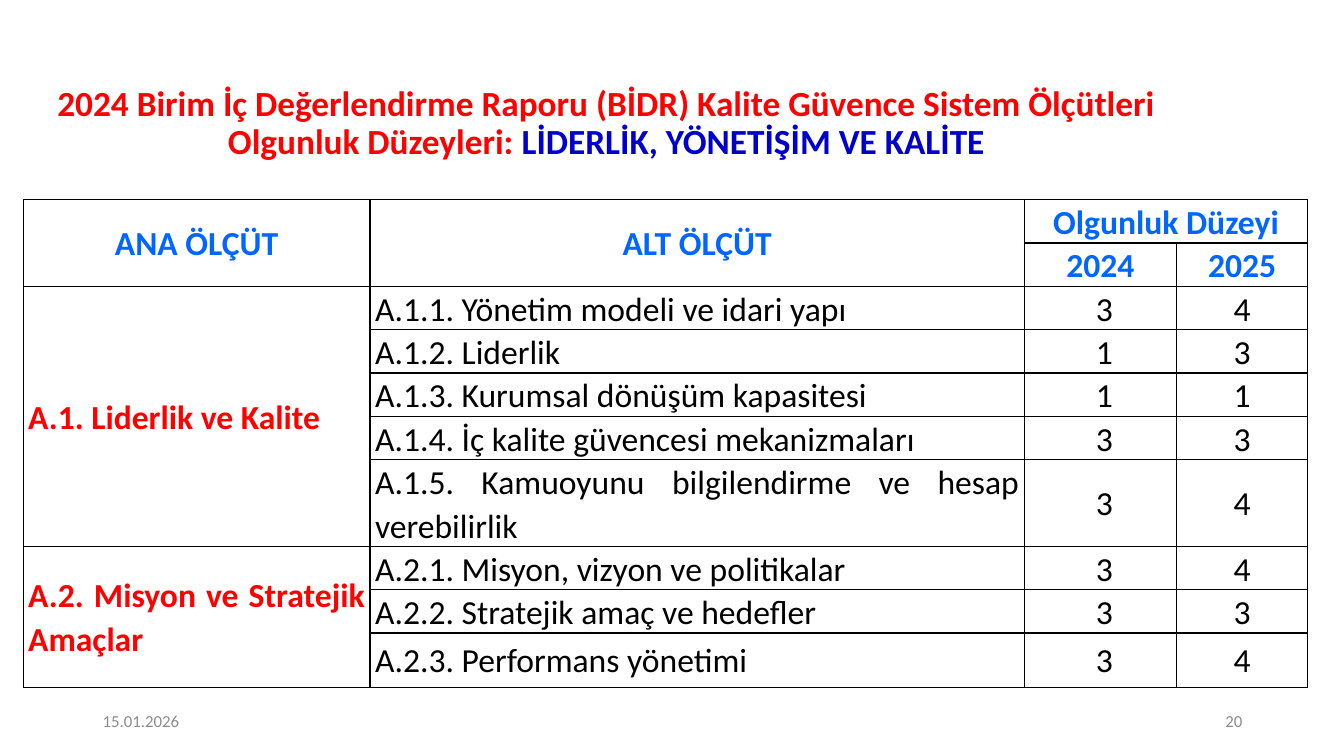
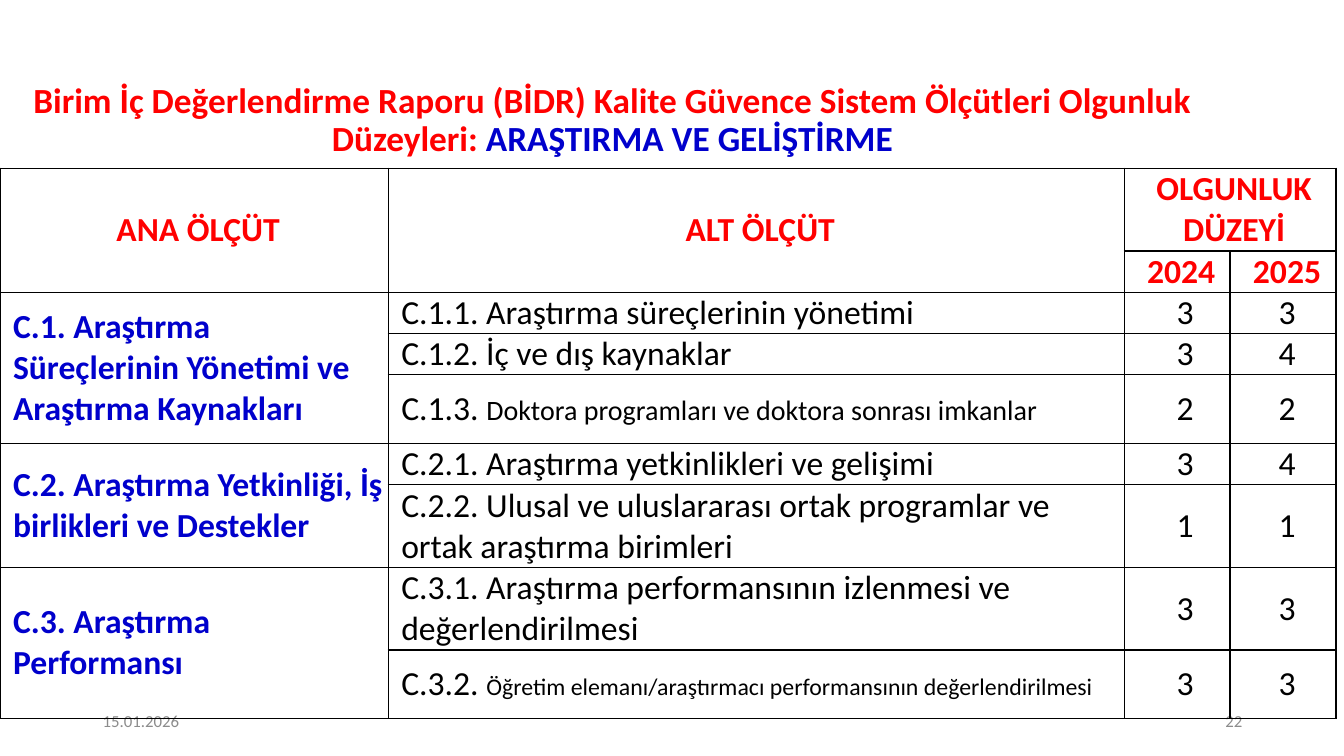
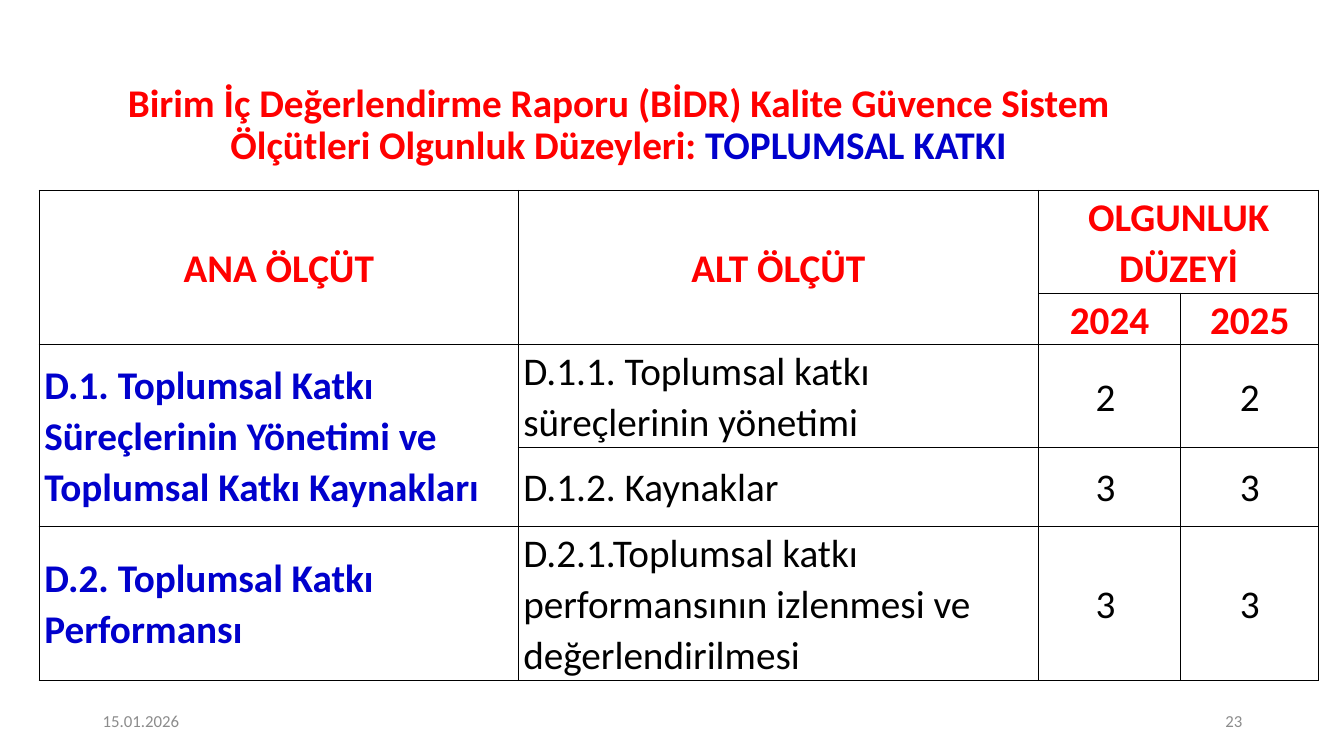
from lxml import etree
from pptx import Presentation
from pptx.dml.color import RGBColor
from pptx.enum.text import MSO_ANCHOR, MSO_AUTO_SIZE, PP_ALIGN
from pptx.oxml.ns import qn
from pptx.util import Inches, Pt

MID = MSO_ANCHOR.MIDDLE
LEFT, RIGHT = PP_ALIGN.LEFT, PP_ALIGN.RIGHT
CENTER, JUST = PP_ALIGN.CENTER, PP_ALIGN.JUSTIFY
RED = RGBColor(0xFF, 0x00, 0x00)
NAVY = RGBColor(0x00, 0x00, 0xCC)
BLUE = RGBColor(0x00, 0x66, 0xFF)
BLACK = RGBColor(0x00, 0x00, 0x00)
GREY = RGBColor(0x8C, 0x8C, 0x8C)
FONT = "Calibri"
DATE = "15.01.2026"
LEAD = ("Birim İç Değerlendirme Raporu (BİDR) Kalite Güvence Sistem "
        "Ölçütleri Olgunluk Düzeyleri: ")
INSET = 0.05

# Content: rows are (sub-criterion, 2024, 2025, height in text lines);
# a sub-criterion in two sizes is (code, rest, size of rest).
# "line" is the height of a text line, "nudge" shifts the 2024 scores.
SLIDES = [
    dict(
        page=20, lead="2024 " + LEAD, topic="LİDERLİK, YÖNETİŞİM VE KALİTE",
        title=(0.36, 0.85, 11.31, 0.77), big=25.2,
        at=(0.23, 1.98), cols=(3.44, 6.49, 1.51, 1.3), line=0.43, size=24,
        space=1.07, indent=0, nudge=0.08, align=JUST,
        head=("Olgunluk Düzeyi", 1), tint=BLUE, main=RED,
        groups=[
            ("A.1. Liderlik ve Kalite", [
                ("A.1.1. Yönetim modeli ve idari yapı", 3, 4, 1),
                ("A.1.2. Liderlik", 1, 3, 1),
                ("A.1.3. Kurumsal dönüşüm kapasitesi", 1, 1, 1),
                ("A.1.4. İç kalite güvencesi mekanizmaları", 3, 3, 1),
                ("A.1.5. Kamuoyunu bilgilendirme ve hesap verebilirlik",
                 3, 4, 2)]),
            ("A.2. Misyon ve Stratejik Amaçlar", [
                ("A.2.1. Misyon, vizyon ve politikalar", 3, 4, 1),
                ("A.2.2. Stratejik amaç ve hedefler", 3, 3, 1),
                ("A.2.3. Performans yönetimi", 3, 4, 1.25)]),
        ]),
    dict(
        page=22, lead=LEAD, topic="ARAŞTIRMA VE GELİŞTİRME",
        title=(0.23, 0.8, 11.69, 0.8), big=25.2,
        at=(0, 1.67), cols=(3.85, 7.3, 1.05, 1.05), line=0.41, size=24,
        space=1.0, indent=0.08, nudge=0.08, align=LEFT,
        head=("OLGUNLUK DÜZEYİ", 2), tint=RED, main=NAVY,
        groups=[
            ("C.1. Araştırma Süreçlerinin Yönetimi ve Araştırma Kaynakları", [
                ("C.1.1. Araştırma süreçlerinin yönetimi", 3, 3, 1),
                ("C.1.2. İç ve dış kaynaklar", 3, 4, 1),
                (("C.1.3. ", "Doktora programları ve doktora sonrası imkanlar",
                  20), 2, 2, 1.66)]),
            ("C.2. Araştırma Yetkinliği, İş birlikleri ve Destekler", [
                ("C.2.1. Araştırma yetkinlikleri ve gelişimi", 3, 4, 1),
                ("C.2.2. Ulusal ve uluslararası ortak programlar ve ortak "
                 "araştırma birimleri", 1, 1, 2)]),
            ("C.3. Araştırma Performansı", [
                ("C.3.1. Araştırma performansının izlenmesi ve "
                 "değerlendirilmesi", 3, 3, 2),
                (("C.3.2. ", "Öğretim elemanı/araştırmacı performansının "
                  "değerlendirilmesi", 17), 3, 3, 1.66)]),
        ]),
    dict(
        page=23, lead=LEAD, topic="TOPLUMSAL KATKI",
        title=(0.52, 0.76, 11.23, 0.97), big=28,
        at=(0.39, 1.89), cols=(4.75, 5.16, 1.41, 1.37), line=0.51, size=28,
        space=1.07, indent=0, nudge=-0.08, align=LEFT,
        head=("OLGUNLUK DÜZEYİ", 2), tint=RED, main=NAVY,
        groups=[
            ("D.1. Toplumsal Katkı Süreçlerinin Yönetimi ve Toplumsal Katkı "
             "Kaynakları", [
                 ("D.1.1. Toplumsal katkı süreçlerinin yönetimi", 2, 2, 2),
                 ("D.1.2. Kaynaklar", 3, 3, 1.53)]),
            ("D.2. Toplumsal Katkı Performansı", [
                ("D.2.1.Toplumsal katkı performansının izlenmesi ve "
                 "değerlendirilmesi", 3, 3, 3)]),
        ]),
]


def style(para, size, color=None, bold=False, align=LEFT, space=1.0):
    para.alignment, para.line_spacing = align, space
    font = para.font
    font.name, font.size, font.bold = FONT, Pt(size), bold
    if color is not None:
        font.color.rgb = color


def add_title(slide, data):
    box = slide.shapes.title
    box.left, box.top, box.width, box.height = map(Inches, data["title"])
    frame = box.text_frame
    frame.word_wrap, frame.auto_size = True, MSO_AUTO_SIZE.NONE
    frame.vertical_anchor = MID
    para = frame.paragraphs[0]
    style(para, data["big"], bold=True, align=CENTER, space=0.9)
    for text, color in ((data["lead"], RED), (data["topic"], NAVY)):
        run = para.add_run()
        run.text, run.font.color.rgb = text, color


def add_foot(slide, page):
    for left, text, align in ((0.92, DATE, LEFT), (9.42, str(page), RIGHT)):
        box = slide.shapes.add_textbox(
            Inches(left), Inches(6.95), Inches(3), Inches(0.4))
        frame = box.text_frame
        frame.word_wrap, frame.vertical_anchor = True, MID
        para = frame.paragraphs[0]
        para.text = text
        style(para, 12, GREY, align=align)


def frame_cell(cell):
    """Black border on all four sides, no fill."""
    props = cell._tc.get_or_add_tcPr()
    for side in ("lnL", "lnR", "lnT", "lnB"):
        edge = etree.SubElement(props, qn("a:" + side), w=str(Pt(1)))
        fill = etree.SubElement(edge, qn("a:solidFill"))
        etree.SubElement(fill, qn("a:srgbClr"), val=str(BLACK))
    cell.fill.background()


def add_grid(slide, data):
    rows = [row for _, part in data["groups"] for row in part]
    lines = [data["head"][1], 1] + [row[3] for row in rows]
    highs = [Inches(n * data["line"]) for n in lines]
    wides = [Inches(w) for w in data["cols"]]
    left, top = map(Inches, data["at"])
    grid = slide.shapes.add_table(
        len(highs), len(wides), left, top, sum(wides), sum(highs)).table
    grid.first_row = grid.horz_banding = False
    for col, wide in zip(grid.columns, wides):
        col.width = wide
    for row, high in zip(grid.rows, highs):
        row.height = high
    for cell in grid.iter_cells():
        frame_cell(cell)
        cell.margin_top = cell.margin_bottom = 0
        cell.margin_right = Inches(INSET)
        cell.margin_left = Inches(INSET + data["indent"])
        cell.vertical_anchor = MID

    def put(row, col, text, color=BLACK, bold=False, align=CENTER):
        para = grid.cell(row, col).text_frame.paragraphs[0]
        style(para, data["size"], color, bold, align, data["space"])
        if isinstance(text, tuple):
            code, rest, small = text
            para.add_run().text = code
            run = para.add_run()
            run.text, run.font.size = rest, Pt(small)
        else:
            para.add_run().text = str(text)

    def join(row, col, end_row, end_col):
        grid.cell(row, col).merge(grid.cell(end_row, end_col))

    # Header
    join(0, 0, 1, 0)
    join(0, 1, 1, 1)
    join(0, 2, 0, 3)
    heads = ((0, 0, "ANA ÖLÇÜT"), (0, 1, "ALT ÖLÇÜT"),
             (0, 2, data["head"][0]), (1, 2, "2024"), (1, 3, "2025"))
    for row, col, text in heads:
        put(row, col, text, data["tint"], True)

    # Criteria and scores
    nudge = Inches(abs(data["nudge"]))
    row = 2
    for name, part in data["groups"]:
        if len(part) > 1:
            join(row, 0, row + len(part) - 1, 0)
        put(row, 0, name, data["main"], True, data["align"])
        for sub, old, new, _ in part:
            put(row, 1, sub, align=data["align"])
            put(row, 2, old)
            put(row, 3, new)
            cell = grid.cell(row, 2)
            if data["nudge"] > 0:
                cell.margin_left += nudge
            else:
                cell.margin_right += nudge
            row += 1


def main():
    deck = Presentation()
    deck.slide_width, deck.slide_height = Inches(13.33), Inches(7.5)
    for data in SLIDES:
        slide = deck.slides.add_slide(deck.slide_layouts[5])
        add_title(slide, data)
        add_foot(slide, data["page"])
        add_grid(slide, data)
    deck.save("out.pptx")


if __name__ == "__main__":
    main()
